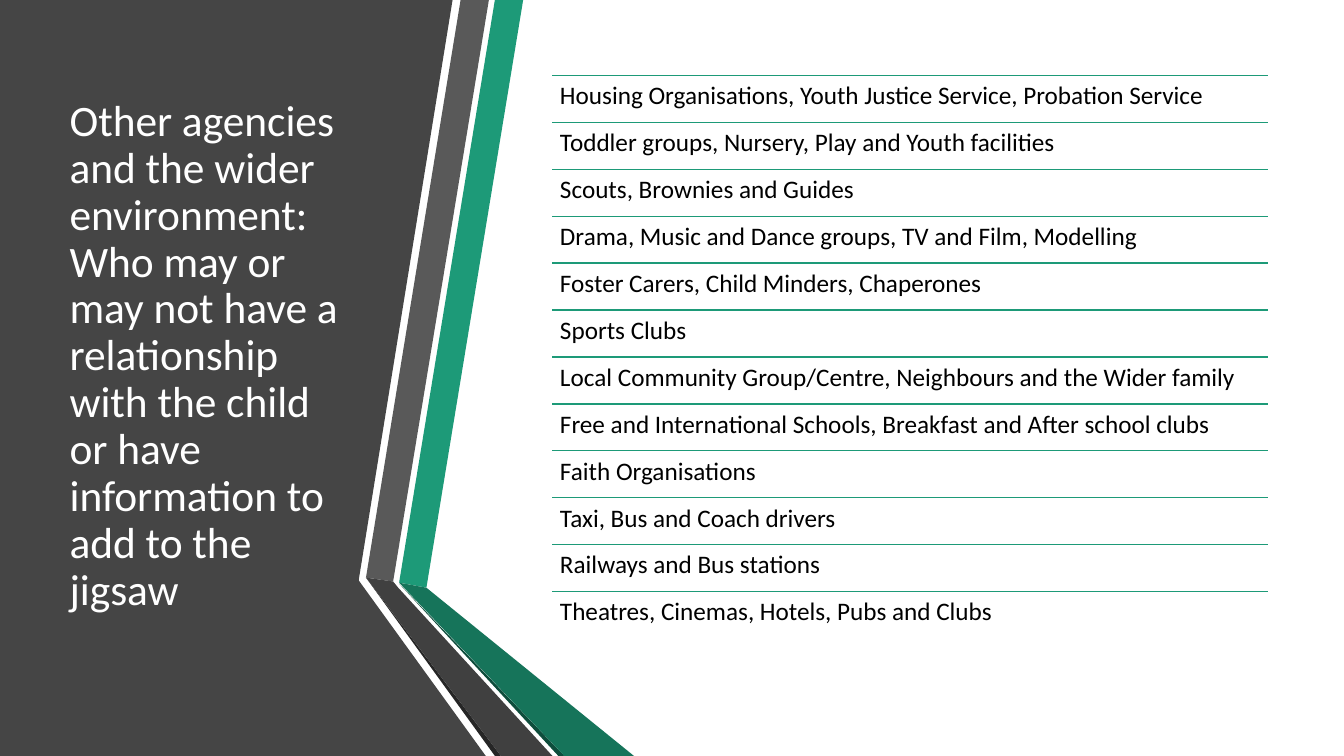
import pptx
import pptx.dml.color
import pptx.enum.shapes
import pptx.enum.text
import pptx.oxml.ns
import pptx.util
from lxml import etree

Pt = pptx.util.Pt

COLORS = {
    "panel": "454545", "green": "1D9A78", "grey": "595959", "black": "000000",
    "near_black": "262626", "deep_green": "0E4D3C", "dark_green": "16745A",
    "charcoal": "404040", "white": "FFFFFF",
}

PANEL = [(0, 0), (323.3, 0), (256.3, 414), (256.3, 414.7), (347, 540), (0, 540)]

RIBBONS = [
    ("green", [(285.1, 416.2), (304.6, 419.8), (373.7, 0), (353.5, 0)]),
    ("grey", [(349.2, 0), (329, 0), (261.4, 412.6), (280.8, 415.4)]),
    ("near_black", [(261.4, 412.6), (353.5, 540), (357.8, 540)]),
    ("deep_green", [(285.1, 416.9), (398.9, 540), (403.2, 540)]),
    ("dark_green", [(285.1, 416.2), (403.2, 540), (452.9, 540), (304.6, 419.8)]),
    ("charcoal", [(394.6, 540), (284.4, 419.8), (280.8, 415.4), (261.4, 412.6),
                  (357.8, 540)]),
]

TITLE = ("Other agencies and the wider environment:\vWho may or may not have a "
         "relationship with the child or have information to add to the jigsaw")

AGENCIES = [
    "Housing Organisations, Youth Justice Service, Probation Service",
    "Toddler groups, Nursery, Play and Youth facilities",
    "Scouts, Brownies and Guides",
    "Drama, Music and Dance groups, TV and Film, Modelling",
    "Foster Carers, Child Minders, Chaperones",
    "Sports Clubs",
    "Local Community Group/Centre, Neighbours and the Wider family",
    "Free and International Schools, Breakfast and After school clubs",
    "Faith Organisations",
    "Taxi, Bus and Coach drivers",
    "Railways and Bus stations",
    "Theatres, Cinemas, Hotels, Pubs and Clubs",
]

LIST_LEFT, LIST_TOP, LIST_WIDTH, ROW_HEIGHT = 394.6, 54, 511.2, 33.5


def rgb(name):
    return pptx.dml.color.RGBColor.from_string(COLORS[name])


def set_attrs(obj, values):
    for name, value in values.items():
        setattr(obj, name, value)


def write_text(tf, text, size, color, anchor):
    set_attrs(tf, {"word_wrap": True, "vertical_anchor": anchor,
                   "auto_size": pptx.enum.text.MSO_AUTO_SIZE.NONE})
    p = tf.paragraphs[0]
    p.text = text
    set_attrs(p, {"line_spacing": 0.9, "alignment": pptx.enum.text.PP_ALIGN.LEFT})
    for r in p.runs:
        set_attrs(r.font, {"name": "Calibri", "size": Pt(size)})
        r.font.color.rgb = rgb(color)


def add_polygon(shapes, points, color):
    start, *rest = [(Pt(x), Pt(y)) for x, y in points]
    builder = shapes.build_freeform(*start)
    builder.add_line_segments(rest, close=True)
    sp = builder.convert_to_shape()
    sp.shadow.inherit = False
    sp.fill.solid()
    sp.fill.fore_color.rgb = rgb(color)
    sp.line.fill.background()


def add_rule(shapes, left, top, width):
    line = shapes.add_connector(pptx.enum.shapes.MSO_CONNECTOR.STRAIGHT,
                                Pt(left), Pt(top), Pt(left + width), Pt(top))
    line.line.color.rgb = rgb("green")
    line.line.width = Pt(1)
    etree.SubElement(line._element.spPr, pptx.oxml.ns.qn("a:effectLst"))


def add_row(shapes, top, text):
    add_rule(shapes, LIST_LEFT, top, LIST_WIDTH)
    tf = shapes.add_textbox(Pt(LIST_LEFT), Pt(top), Pt(LIST_WIDTH),
                            Pt(ROW_HEIGHT)).text_frame
    sides = ("left", "top", "right", "bottom")
    set_attrs(tf, {f"margin_{side}": Pt(5.4) for side in sides})
    write_text(tf, text, 18, "black", pptx.enum.text.MSO_ANCHOR.TOP)


def place_title(s):
    """Fill the title placeholder and bring it in front of the panel."""
    title = s.shapes.title
    set_attrs(title, {"left": Pt(42.5), "top": Pt(54),
                      "width": Pt(218.9), "height": Pt(401.8)})
    write_text(title.text_frame, TITLE, 31, "white",
               pptx.enum.text.MSO_ANCHOR.MIDDLE)
    s.shapes._spTree.append(title._element)


def main():
    prs = pptx.Presentation()
    set_attrs(prs, {"slide_width": Pt(960), "slide_height": Pt(540)})
    s = prs.slides.add_slide(prs.slide_layouts[5])

    add_polygon(s.shapes, PANEL, "panel")
    ribbons = s.shapes.add_group_shape()
    for color, points in RIBBONS:
        add_polygon(ribbons.shapes, points, color)
    place_title(s)
    rows = s.shapes.add_group_shape()
    for i, agency in enumerate(AGENCIES):
        add_row(rows.shapes, LIST_TOP + i * ROW_HEIGHT, agency)

    prs.save("out.pptx")


if __name__ == "__main__":
    main()
